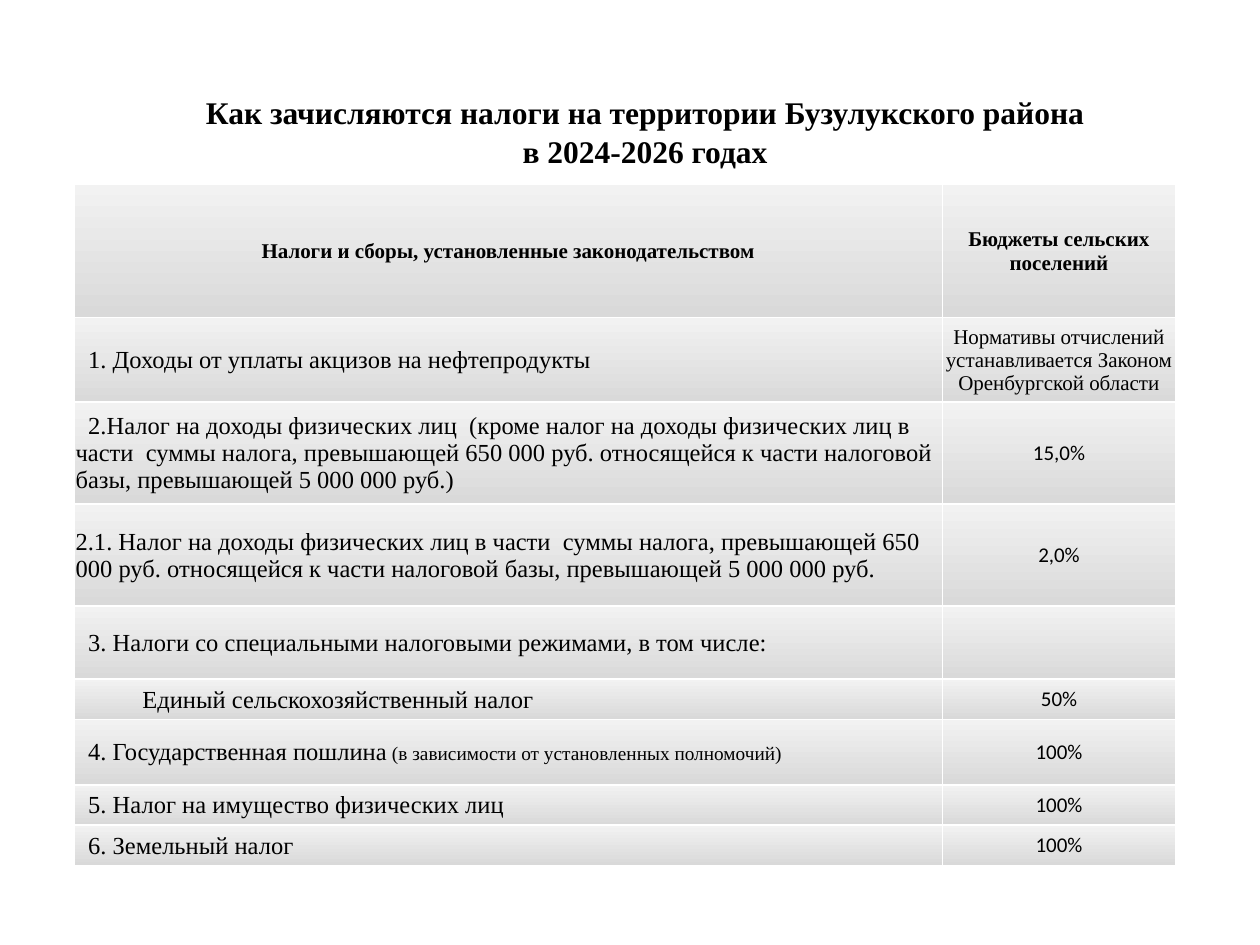
from dataclasses import dataclass

import pptx
import pptx.dml.color
import pptx.enum.text
import pptx.oxml
import pptx.oxml.ns
import pptx.util
from pptx.util import Inches

COLORS = {"text": "000000", "border": "FFFFFF", "top": "F2F2F2", "bottom": "D9D9D9"}
SERIF, SANS = "Times New Roman", "Calibri"
ALIGN = pptx.enum.text.PP_ALIGN
MIDDLE = pptx.enum.text.MSO_ANCHOR.MIDDLE
COLUMN_WIDTHS = (6.89, 1.85)


@dataclass
class TaxRow:
    height: float
    tax: str
    share: str
    indent: float = 0.1
    note: str = ""
    share_font: str = SANS


HEADER = TaxRow(1.06, "Налоги и сборы, установленные законодательством",
                "Бюджеты сельских поселений")
TAXES = [
    TaxRow(0.67, "1. Доходы от уплаты акцизов на нефтепродукты",
           "Нормативы отчислений устанавливается Законом Оренбургской области",
           share_font=SERIF),
    TaxRow(0.81, "2.Налог на доходы физических лиц  (кроме налог на доходы физических лиц "
           "в части  суммы налога, превышающей 650 000 руб. относящейся к части налоговой "
           "базы, превышающей 5 000 000 руб.)", "15,0%"),
    TaxRow(0.81, "2.1. Налог на доходы физических лиц в части  суммы налога, превышающей "
           "650 000 руб. относящейся к части налоговой базы, превышающей 5 000 000 руб.",
           "2,0%", indent=0),
    TaxRow(0.58, "3. Налоги со специальными налоговыми режимами, в том числе:", ""),
    TaxRow(0.32, "Единый сельскохозяйственный налог", "50%", indent=0.53),
    TaxRow(0.52, "4. Государственная пошлина", "100%",
           note=" (в зависимости от установленных полномочий)"),
    TaxRow(0.32, "5. Налог на имущество физических лиц", "100%"),
    TaxRow(0.32, "6. Земельный налог", "100%"),
]


def rgb(name: str) -> pptx.dml.color.RGBColor:
    return pptx.dml.color.RGBColor.from_string(COLORS[name])


def add_text(p, text: str, *, size: float = 14, font: str = SERIF, bold: bool = False,
             align=ALIGN.LEFT, indent: float = 0) -> None:
    """Append a run to a paragraph and set the paragraph's alignment and first-line indent."""
    p.alignment = align
    if indent:
        p_pr = p._p.get_or_add_pPr()
        p_pr.set("marL", "0")
        p_pr.set("indent", str(Inches(indent)))
    r = p.add_run()
    r.text = text
    r.font.size = pptx.util.Pt(size)
    r.font.name = font
    r.font.bold = bold
    r.font.color.rgb = rgb("text")


def style_cell(cell) -> None:
    """Give a cell its margins, gradient and white borders."""
    cell.vertical_anchor = MIDDLE
    cell.margin_left = cell.margin_right = cell.margin_top = Inches(0.01)
    cell.margin_bottom = 0
    cell.fill.gradient()
    cell.fill.gradient_angle = 270
    for stop, position, name in zip(cell.fill.gradient_stops, (0, 1), ("top", "bottom")):
        stop.position = position
        stop.color.rgb = rgb(name)
    tc_pr = cell._tc.get_or_add_tcPr()
    for i, side in enumerate(("lnL", "lnR", "lnT", "lnB")):
        tc_pr.insert(i, pptx.oxml.parse_xml(
            f'<a:{side} {pptx.oxml.ns.nsdecls("a")} w="{pptx.util.Pt(1)}"><a:solidFill>'
            f'<a:srgbClr val="{COLORS["border"]}"/></a:solidFill></a:{side}>'))


def add_title(s) -> None:
    sp = s.shapes.title
    sp.left, sp.top, sp.width, sp.height = map(Inches, (0.75, 0.68, 8.74, 0.71))
    tf = sp.text_frame
    tf.word_wrap = True
    tf.auto_size = pptx.enum.text.MSO_AUTO_SIZE.NONE
    tf.vertical_anchor = MIDDLE
    lines = ("Как зачисляются налоги на территории Бузулукского района",
             "в 2024-2026 годах")
    for i, line in enumerate(lines):
        p = tf.add_paragraph() if i else tf.paragraphs[0]
        p.line_spacing = 1.05
        add_text(p, line, size=18, bold=True, align=ALIGN.CENTER)


def add_tax_table(s) -> None:
    rows = [HEADER, *TAXES]
    table = s.shapes.add_table(
        len(rows), len(COLUMN_WIDTHS), Inches(0.59), Inches(1.46),
        Inches(sum(COLUMN_WIDTHS)), Inches(sum(row.height for row in rows))).table
    for column, width in zip(table.columns, COLUMN_WIDTHS):
        column.width = Inches(width)
    for i, row in enumerate(rows):
        table.rows[i].height = Inches(row.height)
        cells = table.cell(i, 0), table.cell(i, 1)
        for cell in cells:
            style_cell(cell)
        tax, share = (cell.text_frame.paragraphs[0] for cell in cells)
        if row is HEADER:
            for p, text in ((tax, row.tax), (share, row.share)):
                add_text(p, text, size=12, bold=True, align=ALIGN.CENTER)
            continue
        add_text(tax, row.tax, indent=row.indent)
        if row.note:
            add_text(tax, row.note, size=11, indent=row.indent)
        if row.share:
            add_text(share, row.share, size=12, font=row.share_font, align=ALIGN.CENTER)


def main() -> None:
    prs = pptx.Presentation()
    prs.slide_width, prs.slide_height = Inches(10), Inches(7.5)
    s = prs.slides.add_slide(prs.slide_layouts.get_by_name("Title Only"))
    add_title(s)
    add_tax_table(s)
    prs.save("out.pptx")


if __name__ == "__main__":
    main()
